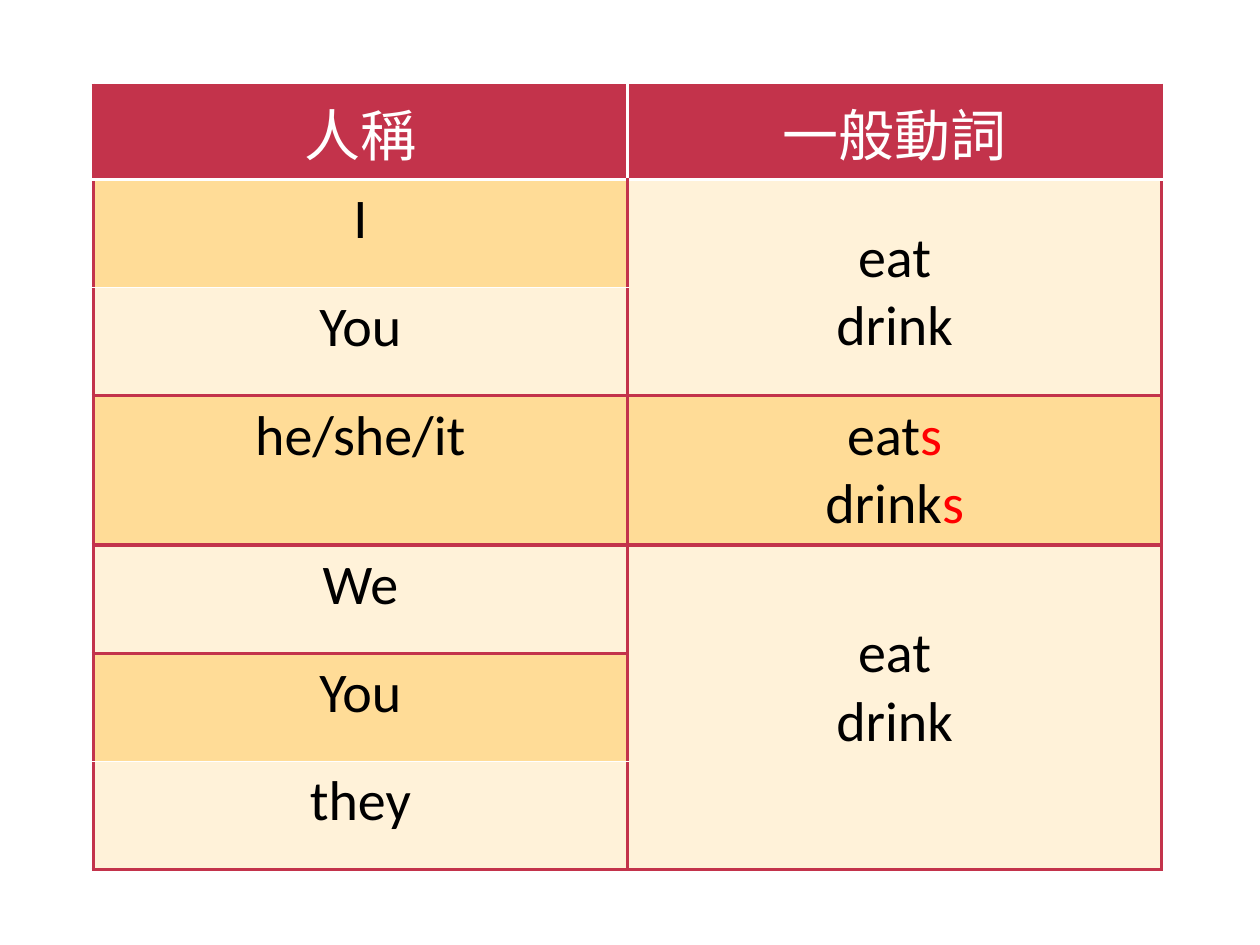
from lxml import etree
from pptx import Presentation
from pptx.dml.color import RGBColor as RGB
from pptx.enum.text import PP_ALIGN
from pptx.oxml.ns import qn
from pptx.util import Cm, Pt

COLORS = {
    "red": "C3334B",
    "white": "FFFFFF",
    "black": "000000",
    "gold": "FFDC97",
    "cream": "FFF2D9",
    "ending": "FF0000",
}
FONT, EAST_FONT = "Calibri", "Noto Sans CJK JP"
ROW_HEIGHTS = [1.75, 2.18, 2.18, 3, 2.18, 2.18, 2.18]
PERSONS = ["人稱", "I", "You", "he/she/it", "We", "You", "they"]
PERSON_FILLS = ["red", "gold", "cream", "gold", "cream", "gold", "cream"]
VERB_FILLS = ["red", "cream", "cream", "gold", "cream", "cream", "cream"]
THIN_EDGES = (2, 5 + 1)


def color(name):
    return RGB.from_string(COLORS[name])


def add_border(cell, side, name, width=2.25):
    ln = etree.SubElement(cell._tc.get_or_add_tcPr(), qn(f"a:ln{side}"), w=str(Pt(width)))
    fill = etree.SubElement(ln, qn("a:solidFill"))
    etree.SubElement(fill, qn("a:srgbClr"), val=COLORS[name])


def edge_style(edge, col):
    if edge == 1:
        return "white", 2.25
    if col == 0 and edge in THIN_EDGES:
        return "white", 1
    return "red", 2.25


def style_cell(cell, row, col, fill):
    middle = "white" if row == 0 else "red"
    add_border(cell, "L", "red" if col == 0 else middle)
    add_border(cell, "R", middle if col == 0 else "red")
    add_border(cell, "T", *edge_style(row, col))
    add_border(cell, "B", *edge_style(row + 1, col))
    cell.fill.solid()
    cell.fill.fore_color.rgb = color(fill)


def write_cell(cell, lines, text_color="black", ending="", font=FONT):
    tf = cell.text_frame
    for i, line in enumerate(lines):
        p = tf.paragraphs[0] if i == 0 else tf.add_paragraph()
        p.alignment = PP_ALIGN.CENTER
        p.font.size = Pt(32)
        p.font.name = font
        etree.SubElement(p.font._element, qn("a:ea"), typeface=EAST_FONT)
        for text, name in ((line, text_color), (ending, "ending")):
            if text:
                r = p.add_run()
                r.text = text
                r.font.color.rgb = color(name)


def add_verb_table(slide):
    shape = slide.shapes.add_table(len(PERSONS), 2, Cm(1.88), Cm(1.72),
                                   Cm(21.54), Cm(sum(ROW_HEIGHTS)))
    table = shape.table
    table.first_row = table.horz_banding = False
    for row, height in enumerate(ROW_HEIGHTS):
        table.rows[row].height = Cm(height)
        for col, fills in enumerate((PERSON_FILLS, VERB_FILLS)):
            style_cell(table.cell(row, col), row, col, fills[row])
    return table


def main():
    prs = Presentation()
    prs.slide_width, prs.slide_height = Cm(25.4), Cm(19.05)
    slide = prs.slides.add_slide(prs.slide_layouts[6])
    table = add_verb_table(slide)

    for row, person in enumerate(PERSONS):
        if row == 0:
            write_cell(table.cell(0, 0), [person], "white", font=EAST_FONT)
        else:
            write_cell(table.cell(row, 0), [person])

    verbs = ["eat", "drink"]
    write_cell(table.cell(0, 1), ["一般動詞"], "white", font=EAST_FONT)
    write_cell(table.cell(3, 1), verbs, ending="s")
    for first, last, top in ((1, 2, 0.9), (4, 6, 1.5)):
        cell = table.cell(first, 1)
        cell.merge(table.cell(last, 1))
        cell.margin_top = Cm(top)
        write_cell(cell, verbs)

    prs.save("out.pptx")


if __name__ == "__main__":
    main()
